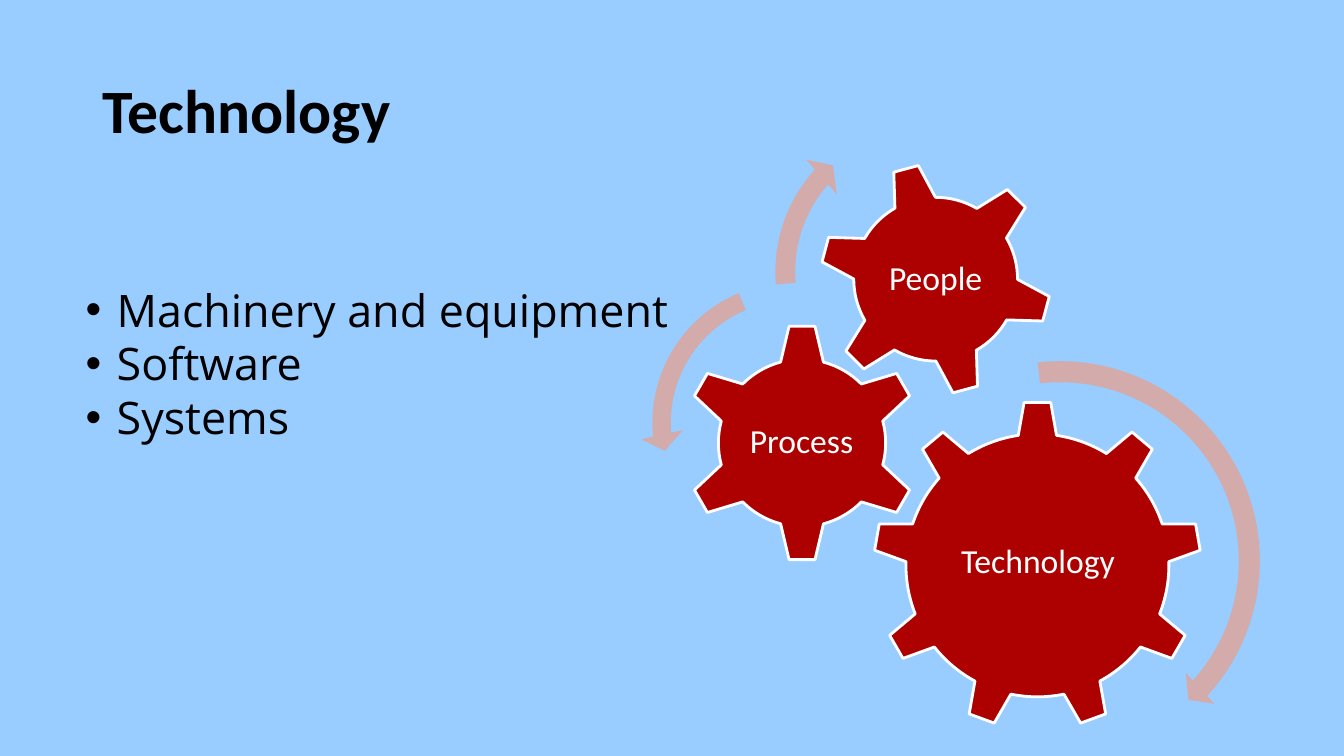
from dataclasses import dataclass

from lxml import etree
from pptx import Presentation
from pptx import util as u
from pptx.dml.color import RGBColor
from pptx.enum import shapes, text
from pptx.oxml.ns import qn

PX = u.Inches(1) // 100
SKY = RGBColor(0x99, 0xCC, 0xFF)
RED = RGBColor(0xAD, 0x01, 0x01)
PINK = RGBColor(0xD3, 0xAB, 0xAB)
WHITE = RGBColor(0xFF, 0xFF, 0xFF)
BLACK = RGBColor(0x00, 0x00, 0x00)
GEAR_6 = shapes.MSO_SHAPE.GEAR_6
GEAR_9 = shapes.MSO_SHAPE.GEAR_9
ARROW = shapes.MSO_SHAPE.CIRCULAR_ARROW
LEFT_ARROW = shapes.MSO_SHAPE.LEFT_CIRCULAR_ARROW


@dataclass(frozen=True)
class Area:
    """A rectangle in px."""
    left: int
    top: int
    width: int
    height: int

    def emu(self) -> list[int]:
        """Return the rectangle in EMU."""
        return [side * PX for side in (self.left, self.top, self.width, self.height)]


@dataclass(frozen=True)
class Gear:
    """A toothed wheel and the area of its label."""
    label: str
    kind: shapes.MSO_SHAPE
    area: Area
    label_area: Area
    rotation: int = 0


@dataclass(frozen=True)
class Turn:
    """A curved arrow showing which way a gear turns."""
    kind: shapes.MSO_SHAPE
    area: Area
    adjustments: tuple[float, ...]


GEARS = (
    Gear("Technology", GEAR_9, Area(866, 398, 326, 326), Area(932, 474, 195, 168)),
    Gear("Process", GEAR_6, Area(677, 321, 237, 237), Area(736, 381, 118, 117)),
    Gear("People", GEAR_6, Area(812, 161, 232, 232), Area(863, 212, 130, 130), 345),
)
TURNS = (
    Turn(ARROW, Area(843, 348, 417, 417), (0.05, 2.99, 25.39, 158.12, 0.05)),
    Turn(LEFT_ARROW, Area(635, 268, 303, 303), (0.06, 4.3, 104.89, 148.38, 0.07)),
    Turn(ARROW, Area(756, 106, 327, 327), (0.06, 3.94, 133.14, 105.08, 0.07)),
)
BULLETS = ("Machinery and equipment", "Software", "Systems")


def add_box(page, area: Area, anchor: text.MSO_ANCHOR):
    """Add an empty wrapping text box and return its text frame."""
    frame = page.shapes.add_textbox(*area.emu()).text_frame
    frame.word_wrap = True
    frame.vertical_anchor = anchor
    return frame


def add_span(para, words: str, font: str, size: int, color: RGBColor, bold: bool = False) -> None:
    """Add one styled run to a paragraph."""
    span = para.add_run()
    span.text = words
    span.font.name = font
    span.font.size = u.Pt(size)
    span.font.color.rgb = color
    span.font.bold = bold


def add_figure(page, kind: shapes.MSO_SHAPE, area: Area, fill: RGBColor):
    """Add a flat filled shape without an outline."""
    figure = page.shapes.add_shape(kind, *area.emu())
    figure.shadow.inherit = False
    figure.fill.solid()
    figure.fill.fore_color.rgb = fill
    figure.line.fill.background()
    return figure


def add_gear(page, gear: Gear) -> None:
    """Draw a gear with its upright label."""
    wheel = add_figure(page, gear.kind, gear.area, RED)
    wheel.rotation = gear.rotation
    wheel.line.color.rgb = WHITE
    wheel.line.width = u.Pt(2)
    frame = add_box(page, gear.label_area, text.MSO_ANCHOR.MIDDLE)
    frame.margin_left = frame.margin_right = 3 * PX
    frame.margin_top = frame.margin_bottom = 3 * PX
    para = frame.paragraphs[0]
    para.alignment = text.PP_ALIGN.CENTER
    para.line_spacing = 0.9
    add_span(para, gear.label, "Calibri", 24, WHITE)


def add_turn(page, turn: Turn) -> None:
    """Draw a curved arrow."""
    arrow = add_figure(page, turn.kind, turn.area, PINK)
    for index, value in enumerate(turn.adjustments):
        arrow.adjustments[index] = value


def add_title(page) -> None:
    """Write the slide title."""
    para = add_box(page, Area(92, 40, 1150, 145), text.MSO_ANCHOR.MIDDLE).paragraphs[0]
    para.line_spacing = 0.9
    add_span(para, "Technology", "Calibri", 44, BLACK, bold=True)


def add_bullets(page) -> None:
    """Write the bulleted list."""
    frame = add_box(page, Area(75, 245, 637, 232), text.MSO_ANCHOR.TOP)
    frame.margin_top = 35 * PX
    for index, words in enumerate(BULLETS):
        para = frame.add_paragraph() if index else frame.paragraphs[0]
        properties = para._p.get_or_add_pPr()
        properties.set("marL", str(31 * PX))
        properties.set("indent", str(-31 * PX))
        etree.SubElement(properties, qn("a:buFont")).set("typeface", "Arial")
        etree.SubElement(properties, qn("a:buChar")).set("char", "•")
        add_span(para, words, "Open Sans", 32, BLACK)


def main() -> None:
    """Build and save the slide."""
    deck = Presentation()
    deck.slide_width = 1333 * PX
    deck.slide_height = 750 * PX
    page = deck.slides.add_slide(deck.slide_layouts[6])
    page.background.fill.solid()
    page.background.fill.fore_color.rgb = SKY
    add_title(page)
    add_bullets(page)
    for gear in GEARS:
        add_gear(page, gear)
    for turn in TURNS:
        add_turn(page, turn)
    deck.save("out.pptx")


if __name__ == "__main__":
    main()
